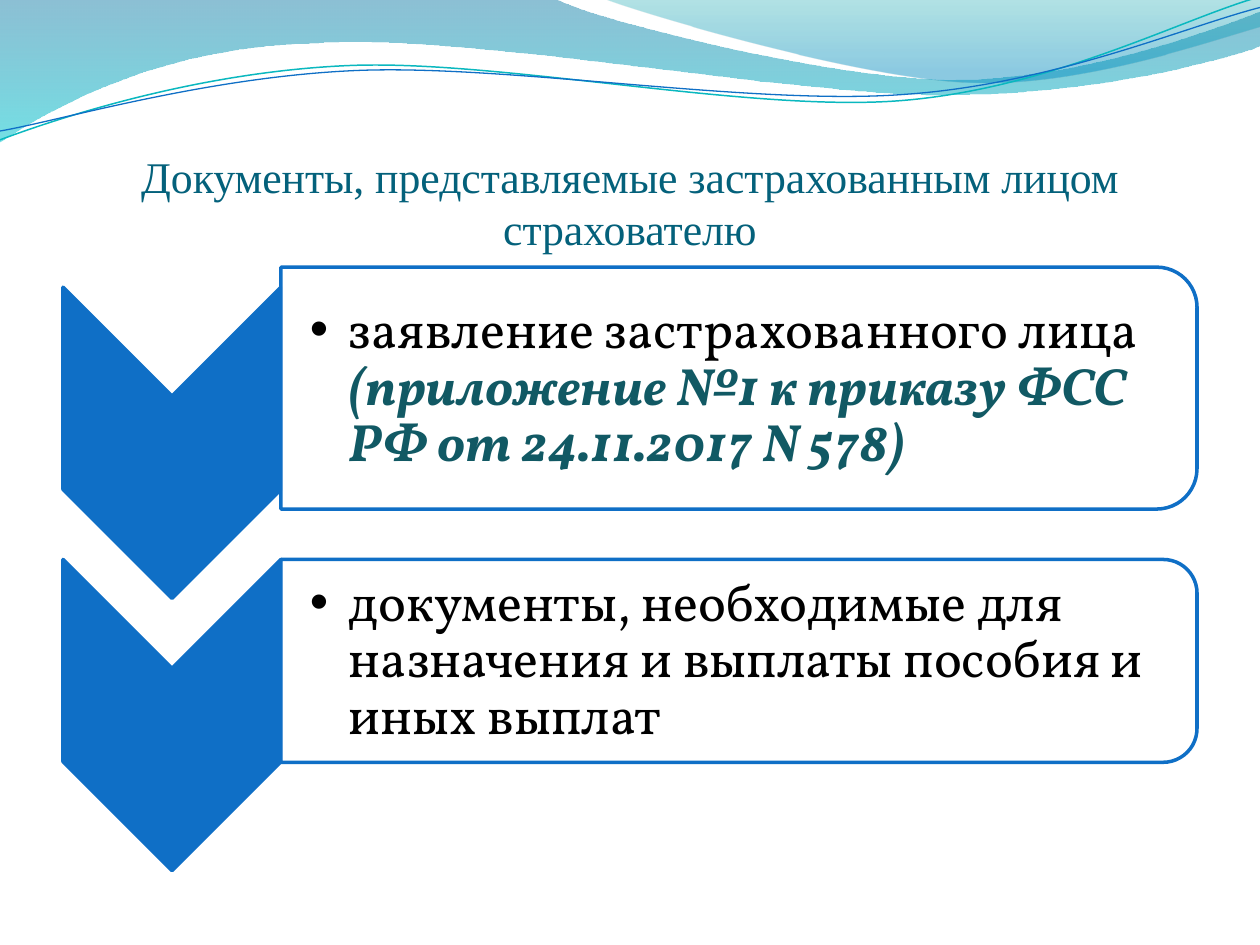
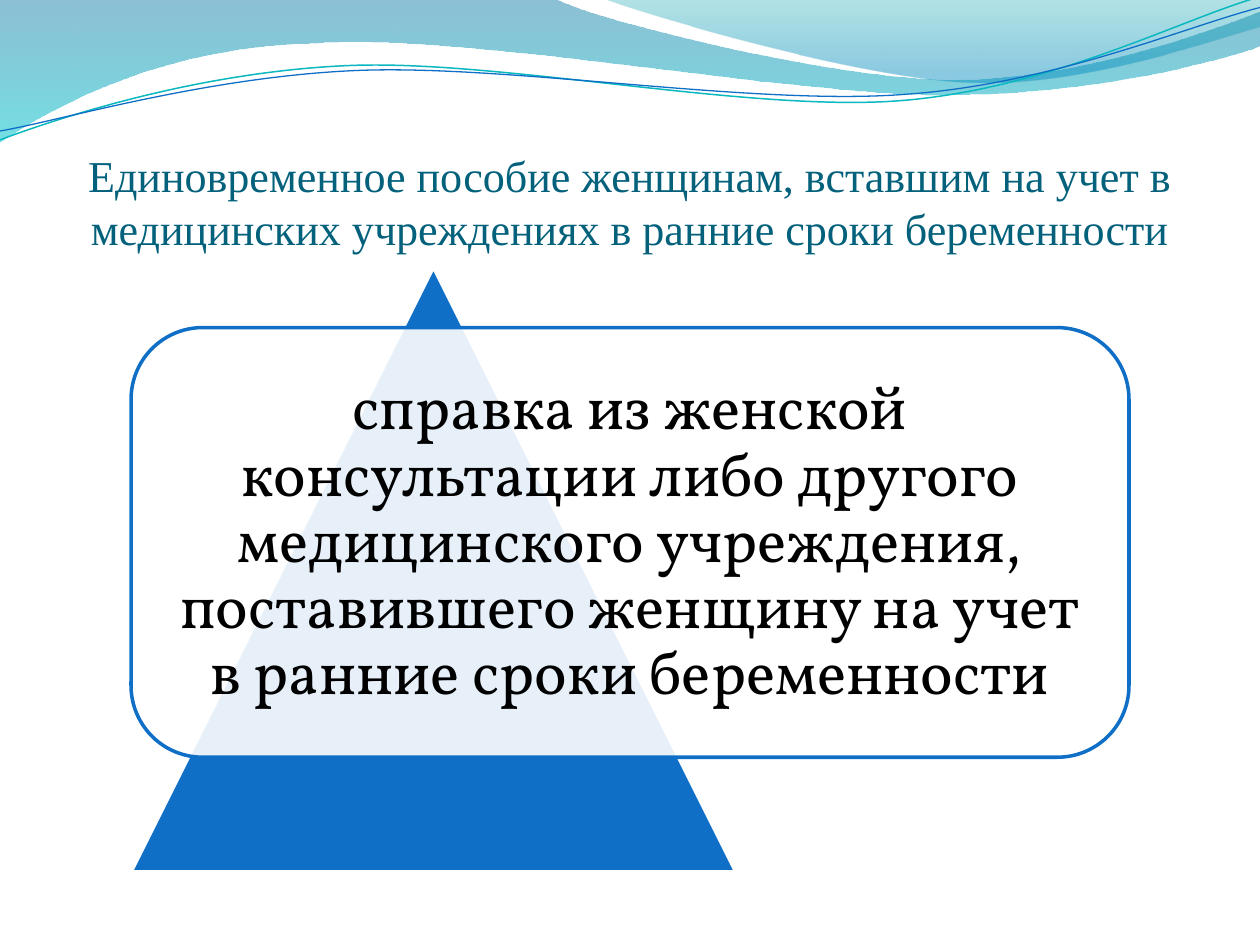
"""Build two slides on documents for benefits under a shared wave header."""
from math import cos, radians, sin
from lxml import etree
from pptx import Presentation
from pptx.dml.color import RGBColor
from pptx.enum.shapes import MSO_SHAPE
from pptx.enum.text import MSO_ANCHOR, PP_ALIGN
from pptx.oxml.ns import qn
from pptx.util import Inches, Pt

CHEVRON, TAB = MSO_SHAPE.CHEVRON, MSO_SHAPE.ROUND_2_SAME_RECTANGLE
PEAK, PANEL = MSO_SHAPE.ISOSCELES_TRIANGLE, MSO_SHAPE.ROUNDED_RECTANGLE
LEFT, CENTER = PP_ALIGN.LEFT, PP_ALIGN.CENTER
MIDDLE, BOTTOM = MSO_ANCHOR.MIDDLE, MSO_ANCHOR.BOTTOM

WHITE = RGBColor(0xFF, 0xFF, 0xFF)
BLACK = RGBColor(0, 0, 0)
BLUE = RGBColor(0x0F, 0x6F, 0xC6)
TEAL = RGBColor(0x0A, 0xB8, 0xBF)
NAVY = RGBColor(0x04, 0x61, 0x7B)
PINE = RGBColor(0x11, 0x59, 0x64)
DEEP = RGBColor(0x00, 0x74, 0xA1)
AQUA = RGBColor(0x00, 0xC6, 0xCF)
MINT = RGBColor(0x00, 0xA1, 0xA9)
SKY = RGBColor(0x00, 0x8B, 0xBF)
SERIF, BODY, DOT = "Times New Roman", "Vollkorn", "Arial"

WIDE, TALL = 10, 7.5
HEAD = (0.5, 0.77, 9, 1.25)
TILT = 357.3

BANDS = [
    ([(0, 0), (4.4, -0.01),
      (4.76, 0.17, 6.64, 0.63, 7.58, 0.63), (8.53, 0.63, 9.58, 0.26, 10, 0.09),
      (10.01, 0.36),
      (9.83, 0.44, 8.7, 0.76, 7.46, 0.75), (6.22, 0.75, 3.82, 0.28, 2.57, 0.34),
      (1.29, 0.36, 0.46, 0.83, -0.01, 1.13), (0, 0)],
     [(0, DEEP, 45), (1, AQUA, 55)]),
    ([(4.79, -0.01),
      (5.09, 0.11, 6.82, 0.62, 7.69, 0.65), (8.56, 0.69, 9.61, 0.32, 10, 0.21),
      (10, 0), (4.79, -0.01)],
     [(0, MINT, 30), (0.8, SKY, 45)]),
]
WAVES = [
    ([(0, 1.11),
      (0.48, 0.93, 1.58, 0.57, 2.77, 0.52), (3.95, 0.47, 5.93, 0.89, 7.13, 0.8),
      (8.33, 0.71, 9.38, 0.15, 9.98, -0.02)], (4.99, 0.58), TEAL, 0.85),
    ([(0, 1.04),
      (0.47, 0.96, 1.64, 0.61, 2.83, 0.56), (4.03, 0.51, 5.97, 0.84, 7.17, 0.75),
      (8.36, 0.67, 9.41, 0.21, 10, 0.06)], (5, 0.59), BLUE, 0.75),
]

PAPERS = "Документы, представляемые застрахованным лицом страхователю"
ITEMS = [
    (2.12, 1.92, [("заявление застрахованного лица ", BLACK, False),
                  ("(приложение №1 к приказу ФСС РФ от 24.11.2017 N 578)", PINE, True)]),
    (4.44, 1.61, [("документы, необходимые для назначения и выплаты пособия"
                   " и иных выплат", BLACK, False)]),
]
GRANT = ("Единовременное пособие женщинам, вставшим на учет в медицинских "
         "учреждениях в ранние сроки беременности")
PROOF = ("справка из женской консультации либо другого медицинского учреждения, "
         "поставившего женщину на учет в ранние сроки беременности")


def add_alpha(mark, share):
    etree.SubElement(mark, qn("a:alpha"), val=str(share * 1000))


def spin(dot, mid, angle):
    x, y = dot[0] - mid[0], dot[1] - mid[1]
    c, s = cos(radians(angle)), sin(radians(angle))
    return mid[0] + x * c - y * s, mid[1] + x * s + y * c


def add_curve(slide, parts, close, mid=(0, 0), tilt=0):
    dots = [spin(part[i:i + 2], mid, -tilt)
            for part in parts for i in range(0, len(part), 2)]
    dots = [(Inches(x), Inches(y)) for x, y in dots]
    pen = slide.shapes.build_freeform(*dots[0])
    pen.add_line_segments(dots[1:], close=close)
    shape = pen.convert_to_shape()
    shape.shadow.inherit = False
    shape.rotation = tilt
    legs = iter(list(shape.element.spPr.iter(qn("a:lnTo"))))
    for part in parts[1:]:
        leg = next(legs)
        if len(part) == 6:
            bend = etree.Element(qn("a:cubicBezTo"))
            leg.addprevious(bend)
            for side in (leg, next(legs), next(legs)):
                bend.append(side[0])
                side.getparent().remove(side)
    return shape


def add_header(slide):
    for parts, stops in BANDS:
        band = add_curve(slide, parts, True)
        band.line.fill.background()
        band.fill.gradient()
        band.fill.gradient_angle = 270
        for stop, (place, tint, _) in zip(band.fill.gradient_stops, stops):
            stop.position = place
            stop.color.rgb = tint
        marks = band.element.spPr.iter(qn("a:srgbClr"))
        for mark, (_, _, share) in zip(marks, stops):
            add_alpha(mark, share)
    for parts, mid, tint, width in WAVES:
        wave = add_curve(slide, parts, False, mid, TILT)
        wave.fill.background()
        wave.line.color.rgb = tint
        wave.line.width = Pt(width)


def add_block(slide, kind, box, fill, line, share=100, turn=False):
    x, y, w, h = box
    if turn:
        x, y, w, h = x + (w - h) / 2, y + (h - w) / 2, h, w
    shape = slide.shapes.add_shape(kind, *map(Inches, (x, y, w, h)))
    shape.rotation = 90 if turn else 0
    shape.shadow.inherit = False
    shape.fill.solid()
    shape.fill.fore_color.rgb = fill
    if share < 100:
        add_alpha(next(shape.element.spPr.iter(qn("a:srgbClr"))), share)
    shape.line.color.rgb = line
    shape.line.width = Pt(2)
    etree.SubElement(shape.element.spPr.find(qn("a:ln")), qn("a:round"))


def add_text(slide, box, runs, font, size, pads, align=CENTER, anchor=MIDDLE, space=0.9):
    frame = slide.shapes.add_textbox(*map(Inches, box)).text_frame
    frame.word_wrap = True
    frame.vertical_anchor = anchor
    (frame.margin_left, frame.margin_top,
     frame.margin_right, frame.margin_bottom) = map(Inches, pads)
    para = frame.paragraphs[0]
    para.alignment = align
    para.line_spacing = space
    for words, tint, strong in runs:
        run = para.add_run()
        run.text = words
        run.font.name, run.font.size = font, Pt(size)
        run.font.color.rgb = tint
        run.font.bold = run.font.italic = strong
    return para


def add_bullet(para, indent):
    props = para._p.get_or_add_pPr()
    props.set("marL", str(Inches(indent)))
    props.set("indent", str(-Inches(indent)))
    etree.SubElement(props, qn("a:buFont"), typeface=DOT)
    etree.SubElement(props, qn("a:buChar"), char="•")


def add_page(deck, title, size):
    slide = deck.slides.add_slide(deck.slide_layouts[6])
    add_header(slide)
    add_text(slide, HEAD, [(title, NAVY, False)], SERIF, size,
             (0, 0.05, 0, 0), anchor=BOTTOM, space=1)
    return slide


def add_list(deck):
    slide = add_page(deck, PAPERS, 25)
    left, mid, right = 0.5, 2.23, 9.5
    for row, (top, high, runs) in enumerate(ITEMS):
        arrow = (left, 2.28 + row * 2.16, mid - left, 2.47)
        add_block(slide, CHEVRON, arrow, BLUE, BLUE, turn=True)
        add_block(slide, TAB, (mid, top, right - mid, high), WHITE, BLUE, 90, True)
        inner = (mid, top + high * 0.05, right - mid - 0.09, high * 0.9)
        para = add_text(slide, inner, runs, BODY, 30, (0.23, 0.02, 0.02, 0.02), LEFT)
        add_bullet(para, 0.31)


def add_proof(deck):
    slide = add_page(deck, GRANT, 25.2)
    x, y, w, h, gap = 1.04, 2.6, WIDE - 2 * 1.04, 3.41, 0.17
    add_block(slide, PEAK, (x, 2.12, 4.8, 4.8), BLUE, WHITE)
    add_block(slide, PANEL, (x, y, w, h), WHITE, BLUE, 90)
    inner = (x + gap, y + gap, w - 2 * gap, h - 2 * gap)
    add_text(slide, inner, [(PROOF, BLACK, False)], BODY, 35, (0.15,) * 4)


def main():
    deck = Presentation()
    deck.slide_width, deck.slide_height = Inches(WIDE), Inches(TALL)
    add_list(deck)
    add_proof(deck)
    deck.save("out.pptx")


if __name__ == "__main__":
    main()
